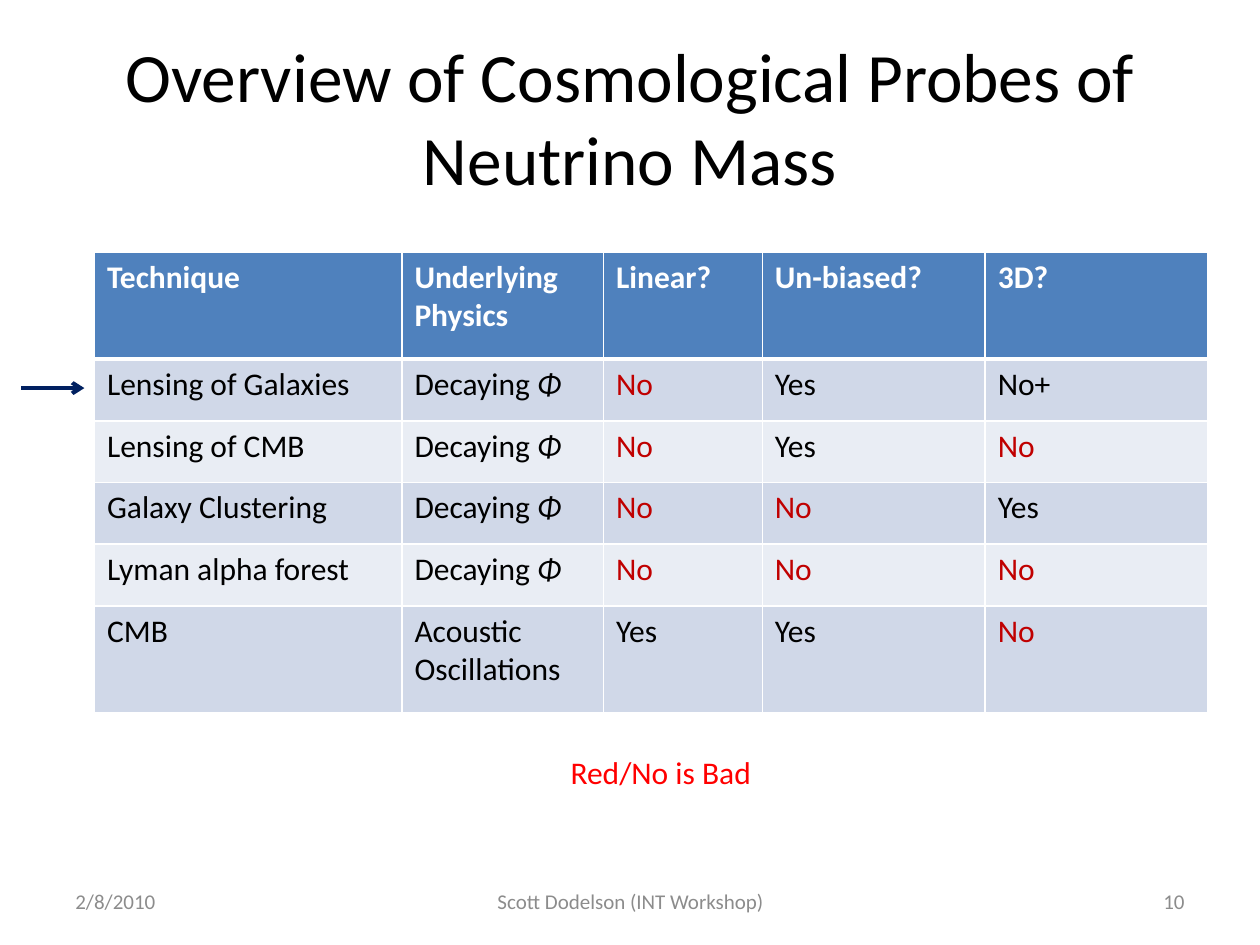
from typing import NamedTuple

from lxml import etree
from pptx import Presentation, util as u
from pptx.dml.color import RGBColor
from pptx.enum import shapes, text
from pptx.oxml import ns

EMU_PER_PX = 9144  # 100 px to the inch
FONT = "Calibri"
COLORS = {
    "black": "000000", "white": "FFFFFF", "header": "4F81BD",
    "band_dark": "D0D8E8", "band_light": "E9EDF4", "bad": "C00000",
    "legend": "FF0000", "footer": "8C8C8C", "arrow": "002060",
}
COLUMN_WIDTHS = [244, 160, 126, 177, 177]
HEADER = ["Technique", "Underlying Physics", "Linear?", "Un-biased?", "3D?"]
PROBES = [
    ["Lensing of Galaxies", "Decaying Φ", "No", "Yes", "No+"],
    ["Lensing of CMB", "Decaying Φ", "No", "Yes", "No"],
    ["Galaxy Clustering", "Decaying Φ", "No", "No", "Yes"],
    ["Lyman alpha forest", "Decaying Φ", "No", "No", "No"],
    ["CMB", "Acoustic Oscillations", "Yes", "Yes", "No"],
]
TALL_ROW, SHORT_ROW = 85, 49


class Box(NamedTuple):
    left: int
    top: int
    width: int
    height: int


class Label(NamedTuple):
    words: str
    box: Box
    size: int
    color: str
    align: text.PP_ALIGN
    anchor: text.MSO_ANCHOR
    wrap: bool


LEFT, CENTER, RIGHT = text.PP_ALIGN.LEFT, text.PP_ALIGN.CENTER, text.PP_ALIGN.RIGHT
TOP, MIDDLE = text.MSO_ANCHOR.TOP, text.MSO_ANCHOR.MIDDLE
LABELS = [
    Label("Red/No is Bad", Box(443, 593, 165, 40), 18, "legend", LEFT, TOP, False),
    Label("2/8/2010", Box(50, 695, 233, 40), 12, "footer", LEFT, MIDDLE, True),
    Label("10", Box(717, 695, 233, 40), 12, "footer", RIGHT, MIDDLE, True),
    Label("Scott Dodelson (INT Workshop)", Box(342, 695, 317, 40), 12, "footer",
          CENTER, MIDDLE, True),
]


def px(length: int) -> u.Emu:
    return u.Emu(length * EMU_PER_PX)


def rgb(name: str) -> RGBColor:
    return RGBColor.from_string(COLORS[name])


def format_run(run, size: float, color: str, bold: bool = False,
               italic: bool = False) -> None:
    run.font.name = FONT
    run.font.size = u.Pt(size)
    run.font.color.rgb = rgb(color)
    run.font.bold = bold
    run.font.italic = italic


def add_title(slide, words: str, box: Box) -> None:
    title = slide.shapes.title
    title.left, title.top, title.width, title.height = map(px, box)
    frame = title.text_frame
    frame.text = words
    frame.auto_size = text.MSO_AUTO_SIZE.NONE
    frame.vertical_anchor = MIDDLE
    frame.paragraphs[0].alignment = CENTER
    format_run(frame.paragraphs[0].runs[0], 39.6, "black")


def add_label(slide, label: Label) -> None:
    frame = slide.shapes.add_textbox(*map(px, label.box)).text_frame
    frame.word_wrap = label.wrap
    frame.vertical_anchor = label.anchor
    if not label.wrap:
        frame.auto_size = text.MSO_AUTO_SIZE.SHAPE_TO_FIT_TEXT
    paragraph = frame.paragraphs[0]
    paragraph.text = label.words
    paragraph.alignment = label.align
    format_run(paragraph.runs[0], label.size, label.color)


def set_borders(cell, top: int, bottom: int) -> None:
    """Draw white cell borders; top and bottom widths are in points."""
    properties = cell._tc.get_or_add_tcPr()
    for side, width in (("L", 1), ("R", 1), ("T", top), ("B", bottom)):
        line = etree.SubElement(properties, ns.qn(f"a:ln{side}"), w=str(u.Pt(width)))
        fill = etree.SubElement(line, ns.qn("a:solidFill"))
        etree.SubElement(fill, ns.qn("a:srgbClr"), val=COLORS["white"])


def fill_cell(cell, words: str, row: int) -> None:
    is_header = row == 0
    set_borders(cell, top=3 if row == 1 else 1, bottom=3 if is_header else 1)
    band = "band_dark" if row % 2 else "band_light"
    cell.fill.solid()
    cell.fill.fore_color.rgb = rgb("header" if is_header else band)

    paragraph = cell.text_frame.paragraphs[0]
    plain, symbol, _ = words.partition("Φ")
    color = "white" if is_header else "bad" if words == "No" else "black"
    paragraph.text = plain
    format_run(paragraph.runs[0], 18, color, bold=is_header)
    if symbol:
        potential = paragraph.add_run()
        potential.text = symbol
        format_run(potential, 18, color, italic=True)


def add_probe_table(slide, left: int, top: int) -> None:
    rows = [HEADER, *PROBES]
    heights = [TALL_ROW, *[SHORT_ROW] * (len(rows) - 2), TALL_ROW]
    box = Box(left, top, sum(COLUMN_WIDTHS), sum(heights))
    table = slide.shapes.add_table(len(rows), len(HEADER), *map(px, box)).table
    for column, width in zip(table.columns, COLUMN_WIDTHS):
        column.width = px(width)
    for r, (words_in_row, height) in enumerate(zip(rows, heights)):
        table.rows[r].height = px(height)
        for c, words in enumerate(words_in_row):
            fill_cell(table.cell(r, c), words, r)


def add_arrow(slide, start: int, end: int, y: int) -> None:
    arrow = slide.shapes.add_connector(
        shapes.MSO_CONNECTOR.STRAIGHT, px(start), px(y), px(end), px(y))
    arrow.line.color.rgb = rgb("arrow")
    arrow.line.width = u.Pt(2.25)
    etree.SubElement(arrow.line._get_or_add_ln(), ns.qn("a:tailEnd"), type="arrow")
    etree.SubElement(arrow._element.spPr, ns.qn("a:effectLst"))


def main() -> None:
    deck = Presentation()
    deck.slide_width, deck.slide_height = px(1000), px(750)
    slide = deck.slides.add_slide(deck.slide_layouts[5])
    add_title(slide, "Overview of Cosmological Probes of Neutrino Mass",
              Box(50, 30, 900, 125))
    add_probe_table(slide, left=75, top=200)
    for label in LABELS:
        add_label(slide, label)
    add_arrow(slide, start=17, end=67, y=308)
    deck.save("out.pptx")


if __name__ == "__main__":
    main()
